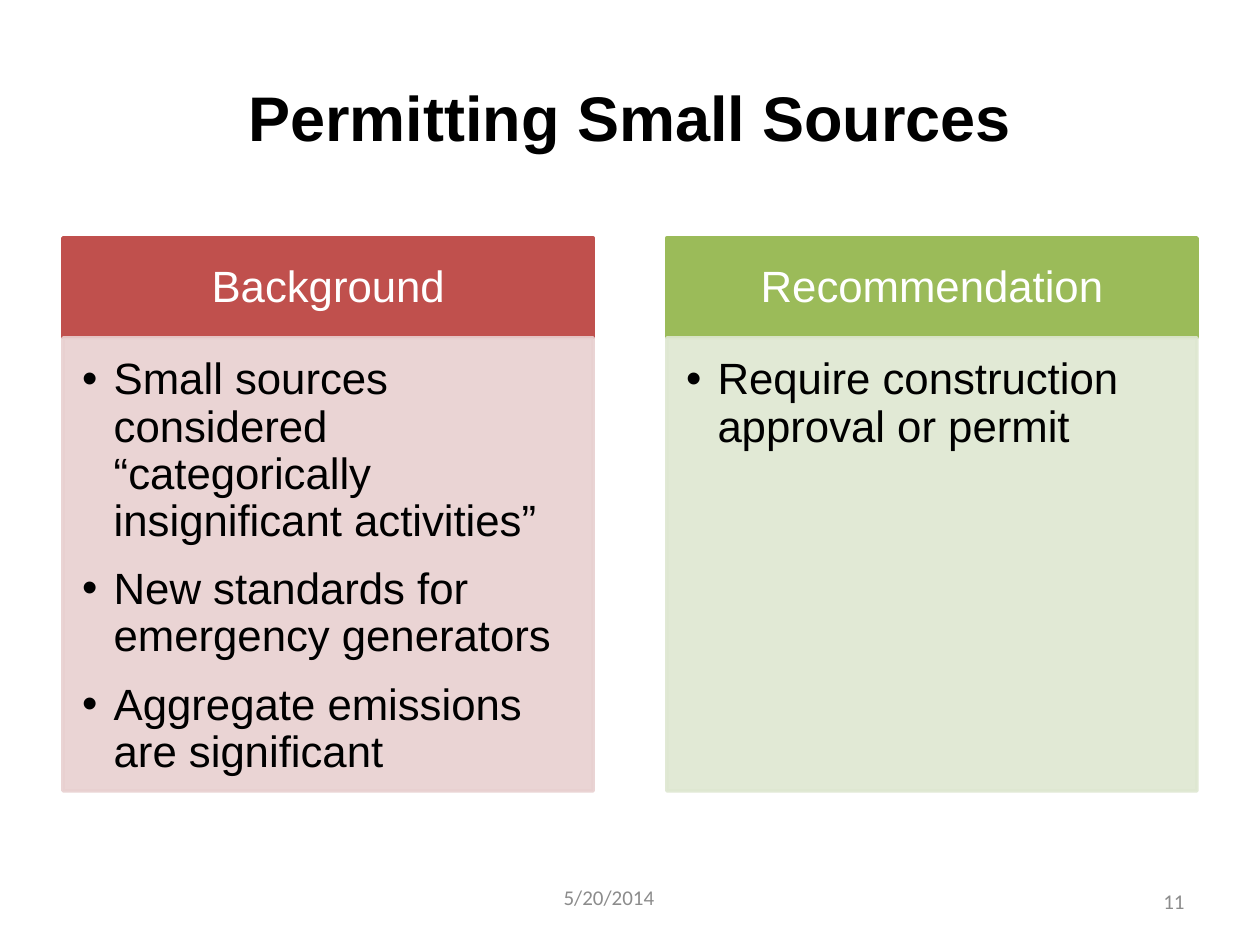
"""Build the slide on permitting small sources."""
from lxml import etree
from pptx import Presentation
from pptx.dml.color import RGBColor
from pptx.enum.text import MSO_ANCHOR, MSO_AUTO_SIZE, PP_ALIGN
from pptx.oxml.ns import qn
from pptx.util import Pt

CENTER, LEFT, RIGHT = PP_ALIGN.CENTER, PP_ALIGN.LEFT, PP_ALIGN.RIGHT
MIDDLE, TOP = MSO_ANCHOR.MIDDLE, MSO_ANCHOR.TOP
NO_FIT = MSO_AUTO_SIZE.NONE
BLACK = RGBColor(0x00, 0x00, 0x00)
WHITE = RGBColor(0xFF, 0xFF, 0xFF)
GRAY = RGBColor(0x8C, 0x8C, 0x8C)
RED = RGBColor(0xC0, 0x50, 0x4D)
PINK = RGBColor(0xE8, 0xD0, 0xD0)
GREEN = RGBColor(0x9B, 0xBB, 0x59)
PALE_GREEN = RGBColor(0xDE, 0xE7, 0xD1)

MARGIN, COLUMN_WIDTH, COLUMN_STEP = 36, 303, 345
HEADING_TOP, HEADING_HEIGHT, LIST_HEIGHT = 136, 57, 259
COLUMNS = [
    ("Background", RED, PINK, [
        "Small sources considered \n“categorically insignificant activities”",
        "New standards for emergency generators",
        "Aggregate emissions are significant",
    ]),
    ("Recommendation", GREEN, PALE_GREEN, ["Require construction approval or permit"]),
]


def place(box, left, top, width, height):
    """Set the position and size of a box in points."""
    box.left, box.top, box.width, box.height = map(Pt, (left, top, width, height))


def paint(box, color, opacity=100):
    """Give a box one colour for its fill and its line."""
    box.fill.solid()
    box.fill.fore_color.rgb = color
    box.line.color.rgb = color
    box.line.width = Pt(2)
    if opacity < 100:
        for element in box.element.spPr.iter(qn("a:srgbClr")):
            etree.SubElement(element, qn("a:alpha"), val=str(opacity * 1000))


def set_frame(box, anchor, insets):
    """Set anchor and insets, given as left, top, right and bottom."""
    frame = box.text_frame
    frame.word_wrap = True
    frame.auto_size = NO_FIT
    frame.vertical_anchor = anchor
    (frame.margin_left, frame.margin_top,
     frame.margin_right, frame.margin_bottom) = map(Pt, insets)


def write(para, text, size, color, align, font="Arial", bold=False):
    """Fill a paragraph and format its runs."""
    para.text = text
    para.alignment = align
    para.space_before = Pt(0)
    for span in para.runs:
        span.font.name = font
        span.font.size = Pt(size)
        span.font.bold = bold
        span.font.color.rgb = color


def write_heading(box, text, color):
    """Write a column heading on a solid band."""
    paint(box, color)
    set_frame(box, MIDDLE, (14, 8, 14, 8))
    para = box.text_frame.paragraphs[0]
    write(para, text, 25, WHITE, CENTER)
    para.line_spacing = 0.9


def write_list(box, items, color):
    """Write a bulleted list on a pale panel."""
    paint(box, color, opacity=90)
    set_frame(box, TOP, (11, 11, 14, 16))
    frame = box.text_frame
    for index, item in enumerate(items):
        para = frame.add_paragraph() if index else frame.paragraphs[0]
        write(para, item, 25, BLACK, LEFT)
        para.line_spacing = 0.9
        para.space_after = Pt(12)
        properties = para._p.get_or_add_pPr()
        properties.set("marL", str(Pt(18)))
        properties.set("indent", str(-Pt(18)))


def add_footer(page, text, left, top, align):
    """Add a small gray footer text."""
    box = page.shapes.add_textbox(Pt(left), Pt(top), Pt(168), Pt(29))
    set_frame(box, MIDDLE, (7.2, 3.6, 7.2, 3.6))
    write(box.text_frame.paragraphs[0], text, 12, GRAY, align, font="Calibri")


def main():
    """Build and save the deck."""
    deck = Presentation()
    deck.slide_width, deck.slide_height = Pt(720), Pt(540)
    page = deck.slides.add_slide(deck.slide_layouts.get_by_name("Comparison"))
    title, *boxes = page.placeholders
    place(title, MARGIN, 21.6, 648, 90)
    set_frame(title, MIDDLE, (7.2, 3.6, 7.2, 3.6))
    write(title.text_frame.paragraphs[0], "Permitting Small Sources", 36, BLACK,
          CENTER, bold=True)
    for index, (heading, strong, pale, items) in enumerate(COLUMNS):
        heading_box, list_box = boxes[2 * index:2 * index + 2]
        left = MARGIN + index * COLUMN_STEP
        place(heading_box, left, HEADING_TOP, COLUMN_WIDTH, HEADING_HEIGHT)
        write_heading(heading_box, heading, strong)
        place(list_box, left, HEADING_TOP + HEADING_HEIGHT, COLUMN_WIDTH, LIST_HEIGHT)
        write_list(list_box, items, pale)
    add_footer(page, "5/20/2014", 264, 498, CENTER)
    add_footer(page, "11", 516, 500.5, RIGHT)
    deck.save("out.pptx")


if __name__ == "__main__":
    main()
